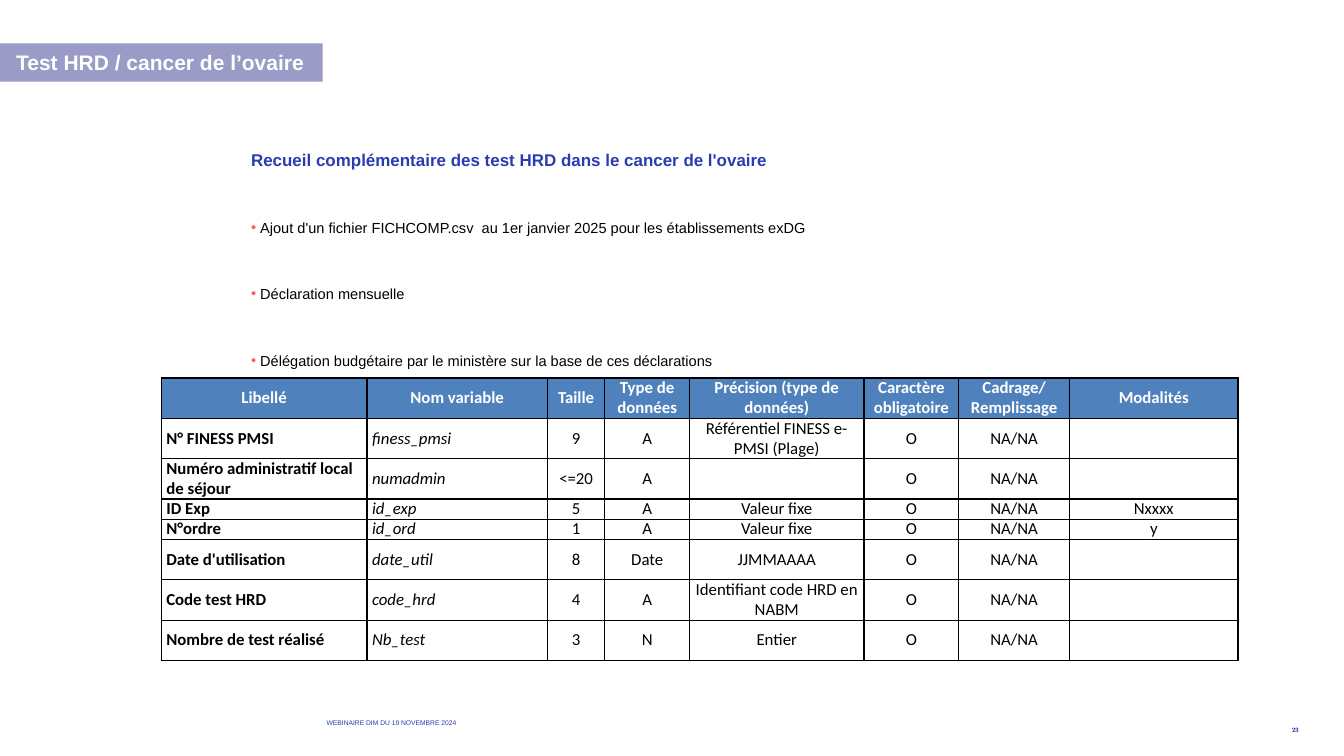
"""Build the slide on the extra data collected for HRD tests."""
from dataclasses import dataclass

from lxml import etree
from pptx import Presentation
from pptx.dml.color import RGBColor
from pptx.enum.text import MSO_ANCHOR, MSO_AUTO_SIZE, PP_ALIGN
from pptx.oxml.ns import qn
from pptx.util import Inches, Pt

LEFT, CENTER, RIGHT = PP_ALIGN.LEFT, PP_ALIGN.CENTER, PP_ALIGN.RIGHT
TOP, MIDDLE = MSO_ANCHOR.TOP, MSO_ANCHOR.MIDDLE
FIXED = MSO_AUTO_SIZE.NONE


@dataclass(frozen=True)
class Theme:
    sans: str = "Arial"
    grid: str = "Calibri"
    serif: str = "Cambria"
    blue: str = "2B3BB2"
    lilac: str = "9B9BC8"
    coral: str = "FF5A64"
    steel: str = "4F81BD"
    white: str = "FFFFFF"
    black: str = "000000"
    title: float = 15
    head: float = 12.1
    body: float = 10.4
    cell: float = 12
    line: float = 14.4
    foot: float = 4.8
    page: float = 4.6
    gap: float = 35


def write(para, text, font, size, color, bold=False, italic=False,
          align=LEFT, before=0, line=1.0):
    para.alignment = align
    para.space_before, para.space_after = Pt(before), Pt(0)
    para.line_spacing = line
    run = para.add_run()
    run.text = text
    run.font.name, run.font.size = font, Pt(size)
    run.font.bold, run.font.italic = bold, italic
    run.font.color.rgb = RGBColor.from_string(color)


def bullet(para, color=None):
    props = para._p.get_or_add_pPr()
    indent = Inches(0.09) if color else 0
    props.set("marL", str(indent))
    props.set("indent", str(-indent))
    if color:
        tint = etree.SubElement(props, qn("a:buClr"))
        etree.SubElement(tint, qn("a:srgbClr"), val=color)
        etree.SubElement(props, qn("a:buChar"), char="•")
    else:
        etree.SubElement(props, qn("a:buNone"))


def border(cell, color):
    props = cell._tc.get_or_add_tcPr()
    for side in ("lnL", "lnR", "lnT", "lnB"):
        edge = etree.SubElement(props, qn("a:" + side), w=str(Pt(1)))
        fill = etree.SubElement(edge, qn("a:solidFill"))
        etree.SubElement(fill, qn("a:srgbClr"), val=color)


class Page:
    def __init__(self, deck, theme):
        self.theme = theme
        self.slide = deck.slides.add_slide(deck.slide_layouts[1])

    def place(self, shape, box, pads, anchor, wrap=True):
        shape.left, shape.top, shape.width, shape.height = map(Inches, box)
        frame = shape.text_frame
        frame.auto_size, frame.word_wrap = FIXED, wrap
        frame.vertical_anchor = anchor
        frame.margin_left = frame.margin_right = Inches(pads[0])
        frame.margin_top, frame.margin_bottom = map(Inches, pads[1:])
        return frame

    def title(self, text, box):
        look = self.theme
        shape = self.slide.shapes.title
        shape.fill.solid()
        shape.fill.fore_color.rgb = RGBColor.from_string(look.lilac)
        frame = self.place(shape, box, (0.16, 0.06, 0.06), MIDDLE, False)
        write(frame.paragraphs[0], text, look.sans, look.title, look.white,
              bold=True)

    def body(self, head, items, box):
        look = self.theme
        frame = self.place(self.slide.placeholders[1], box,
                           (0.03, 0.18, 0), TOP)
        first = frame.paragraphs[0]
        bullet(first)
        write(first, head, look.sans, look.head, look.blue, bold=True)
        for item in items:
            para = frame.add_paragraph()
            bullet(para, look.coral)
            write(para, item, look.sans, look.body, look.black,
                  before=look.gap)

    def label(self, text, box, **form):
        shape = self.slide.shapes.add_textbox(*map(Inches, box))
        frame = self.place(shape, box, (0.04, 0, 0), MIDDLE)
        write(frame.paragraphs[0], text, color=self.theme.blue, **form)

    def table(self, rows, left, top, widths, heights):
        grid = self.slide.shapes.add_table(
            len(rows), len(widths), Inches(left), Inches(top),
            Inches(sum(widths)), Inches(sum(heights))).table
        for col, width in zip(grid.columns, widths):
            col.width = Inches(width)
        for row, height in zip(grid.rows, heights):
            row.height = Inches(height)
        for r, row in enumerate(rows):
            for c, text in enumerate(row):
                self.cell(grid.cell(r, c), text, r == 0, c)

    def cell(self, cell, text, head, col):
        look = self.theme
        border(cell, look.black)
        cell.fill.solid()
        cell.fill.fore_color.rgb = RGBColor.from_string(
            look.steel if head else look.white)
        cell.vertical_anchor = MIDDLE
        cell.margin_left = cell.margin_right = Inches(0.05)
        cell.margin_top = cell.margin_bottom = 0
        if text:
            write(cell.text_frame.paragraphs[0], text, look.grid, look.cell,
                  look.white if head else look.black,
                  bold=head or col == 0, italic=not head and col == 1,
                  align=CENTER if head or col > 1 else LEFT,
                  line=Pt(look.line))


HEADS = ("Libellé", "Nom variable", "Taille", "Type de données",
         "Précision (type de données)", "Caractère obligatoire",
         "Cadrage/ Remplissage", "Modalités")
FIELDS = (
    ("N° FINESS PMSI", "finess_pmsi", "9", "A",
     "Référentiel FINESS e-PMSI (Plage)", ""),
    ("Numéro administratif local de séjour", "numadmin", "<=20", "A", "", ""),
    ("ID Exp", "id_exp", "5", "A", "Valeur fixe", "Nxxxx"),
    ("N°ordre", "id_ord", "1", "A", "Valeur fixe", "y"),
    ("Date d'utilisation", "date_util", "8", "Date", "JJMMAAAA", ""),
    ("Code test HRD", "code_hrd", "4", "A",
     "Identifiant code HRD en NABM", ""),
    ("Nombre de test réalisé", "Nb_test", "3", "N", "Entier", ""),
)
ITEMS = (
    "Ajout d'un fichier FICHCOMP.csv  au 1er janvier 2025 pour les "
    "établissements exDG",
    "Déclaration mensuelle",
    "Délégation budgétaire par le ministère sur la base de ces déclarations",
)


def main():
    deck = Presentation()
    deck.slide_width, deck.slide_height = Inches(13.33), Inches(7.5)
    look = Theme()
    page = Page(deck, look)
    page.title("Test HRD / cancer de l’ovaire", (0, 0.43, 3.2, 0.38))
    page.body("Recueil complémentaire des test HRD dans le cancer de l'ovaire",
              ITEMS, (2.46, 1.3, 9.7, 2.4))
    rows = [HEADS] + [(*field[:5], "O", "NA/NA", field[5])
                      for field in FIELDS]
    page.table(rows, 1.6, 3.75,
               (2.04, 1.79, 0.57, 0.84, 1.73, 0.94, 1.1, 1.67),
               [0.2 if row[0] in ("ID Exp", "N°ordre") else 0.4
                for row in rows])
    page.label("WEBINAIRE DIM DU 19 NOVEMBRE 2024",
               (3.2, 7.1, 5.51, 0.14), font=look.sans, size=look.foot)
    page.label("23", (12.66, 7.2, 0.26, 0.09), font=look.serif,
               size=look.page, bold=True, align=RIGHT)
    deck.save("out.pptx")


if __name__ == "__main__":
    main()
